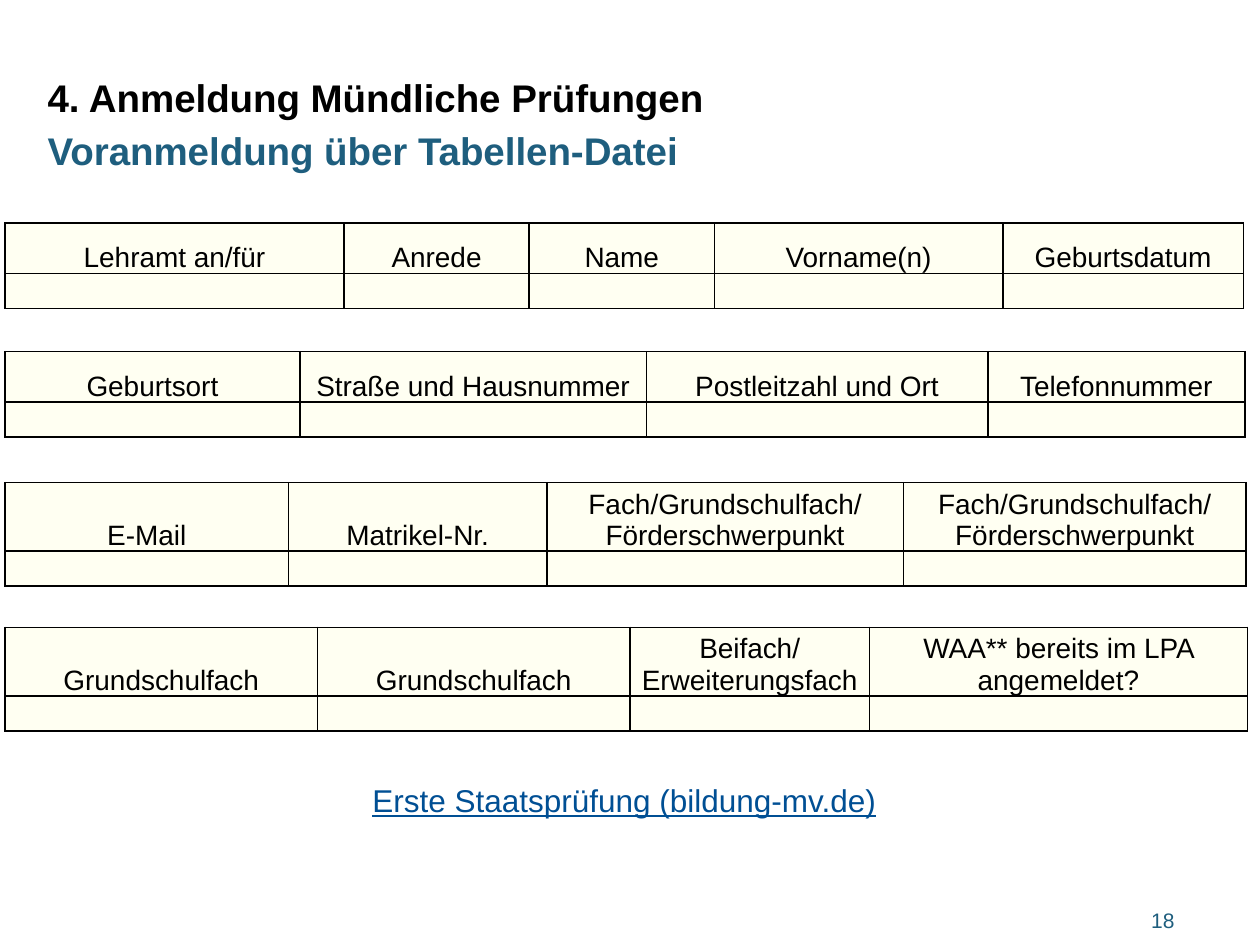
"""Build the slide on the pre-registration form for the oral examinations."""
from copy import deepcopy

from lxml import etree
from pptx import Presentation, util as u
from pptx.dml.color import RGBColor
from pptx.enum import shapes, text
from pptx.oxml import ns

BLACK = RGBColor(0, 0, 0)
WHITE = RGBColor(0xFF, 0xFF, 0xFF)
TEAL = RGBColor(0x1E, 0x5E, 0x7E)
LINK_BLUE = RGBColor(0x00, 0x4F, 0x94)
CREAM = RGBColor(0xFF, 0xFF, 0xCC)

TITLE = [("4. Anmeldung Mündliche Prüfungen", BLACK), ("Voranmeldung über Tabellen-Datei", TEAL)]
FORMS = [
    (1.77, (0.4, 0.26), [("Lehramt an/für", 2.69), ("Anrede", 1.47), ("Name", 1.47),
                         ("Vorname(n)", 2.29), ("Geburtsdatum", 1.91)]),
    (2.79, (0.4, 0.28), [("Geburtsort", 2.34), ("Straße und Hausnummer", 2.75),
                         ("Postleitzahl und Ort", 2.71), ("Telefonnummer", 2.04)]),
    (3.83, (0.5, 0.26), [("E-Mail", 2.25), ("Matrikel-Nr.", 2.05),
                         ("Fach/Grundschulfach/\vFörderschwerpunkt", 2.83),
                         ("Fach/Grundschulfach/\vFörderschwerpunkt", 2.72)]),
    (4.98, (0.5, 0.26), [("Grundschulfach", 2.48), ("Grundschulfach", 2.48),
                         ("Beifach/\vErweiterungsfach", 1.9),
                         ("WAA** bereits im LPA angemeldet?", 3)]),
]
FORM_LEFT = 0.04
LINK = "Erste Staatsprüfung (bildung-mv.de)"
PAGE = "18"


def style(paragraph, size, color, bold=False, underline=False):
    for run in paragraph.runs:
        font = run.font
        font.name, font.size, font.bold, font.underline = "Arial", u.Pt(size), bold, underline
        font.color.rgb = color
    for line_break in paragraph._p.findall(ns.qn("a:br")):
        line_break.append(deepcopy(paragraph.runs[0]._r.rPr))


def text_box(slide, *box):
    frame = slide.shapes.add_textbox(*map(u.Inches, box)).text_frame
    frame.word_wrap = True
    return frame


def format_cell(cell):
    cell.margin_left = cell.margin_right = cell.margin_top = u.Inches(0.01)
    cell.margin_bottom = 0
    cell.vertical_anchor = text.MSO_ANCHOR.BOTTOM
    properties = cell._tc.get_or_add_tcPr()
    for side in ("lnL", "lnR", "lnT", "lnB"):
        border = etree.SubElement(properties, ns.qn(f"a:{side}"), w=str(u.Pt(1)))
        paint = etree.SubElement(border, ns.qn("a:solidFill"))
        etree.SubElement(paint, ns.qn("a:srgbClr"), val=str(BLACK))
    cell.fill.solid()
    cell.fill.fore_color.rgb = CREAM
    color = properties.find(".//" + ns.qn("a:solidFill") + f"/*[@val='{CREAM}']")
    etree.SubElement(color, ns.qn("a:alpha"), val="25000")


def add_form(slide, top, heights, fields):
    width = sum(share for _, share in fields)
    table = slide.shapes.add_table(2, len(fields), u.Inches(FORM_LEFT), u.Inches(top),
                                   u.Inches(width), u.Inches(sum(heights))).table
    table.first_row = table.horz_banding = False
    for row, height in zip(table.rows, heights):
        row.height = u.Inches(height)
    for column, (label, share) in enumerate(fields):
        table.columns[column].width = u.Inches(share)
        header, entry = table.cell(0, column), table.cell(1, column)
        format_cell(header)
        format_cell(entry)
        heading = header.text_frame.paragraphs[0]
        heading.text = label
        heading.alignment = text.PP_ALIGN.CENTER
        style(heading, 16, BLACK)
        etree.SubElement(entry.text_frame.paragraphs[0]._p, ns.qn("a:endParaRPr"), sz="1600")


def add_title(slide):
    title = text_box(slide, 0.28, 0.48, 6.3, 1.14).paragraphs[0]
    title.line_spacing = 1.15
    for index, (line, _) in enumerate(TITLE):
        if index:
            title.add_line_break()
        title.add_run().text = line
    style(title, 22, BLACK, bold=True)
    for run, (_, color) in zip(title.runs, TITLE):
        run.font.color.rgb = color


def add_link(slide):
    panel = slide.shapes.add_shape(shapes.MSO_SHAPE.RECTANGLE,
                                   *map(u.Inches, (1.89, 6.13, 6.13, 0.44)))
    panel.shadow.inherit = False
    panel.fill.solid()
    panel.fill.fore_color.rgb = WHITE
    panel.line.fill.background()
    panel.text_frame.text = LINK
    panel.text_frame.vertical_anchor = text.MSO_ANCHOR.MIDDLE
    link = panel.text_frame.paragraphs[0]
    link.alignment = text.PP_ALIGN.CENTER
    style(link, 18, LINK_BLUE, underline=True)


def add_page_number(slide):
    footer = text_box(slide, 8.49, 7, 0.93, 0.33)
    footer.margin_top, footer.margin_bottom = u.Inches(0.2), 0
    footer.text = PAGE
    footer.paragraphs[0].alignment = text.PP_ALIGN.RIGHT
    style(footer.paragraphs[0], 12, TEAL)


def main():
    deck = Presentation()
    deck.slide_width, deck.slide_height = u.Inches(10), u.Inches(7.5)
    slide = deck.slides.add_slide(deck.slide_layouts[6])
    add_page_number(slide)
    add_title(slide)
    for form in FORMS:
        add_form(slide, *form)
    add_link(slide)
    deck.save("out.pptx")


if __name__ == "__main__":
    main()
